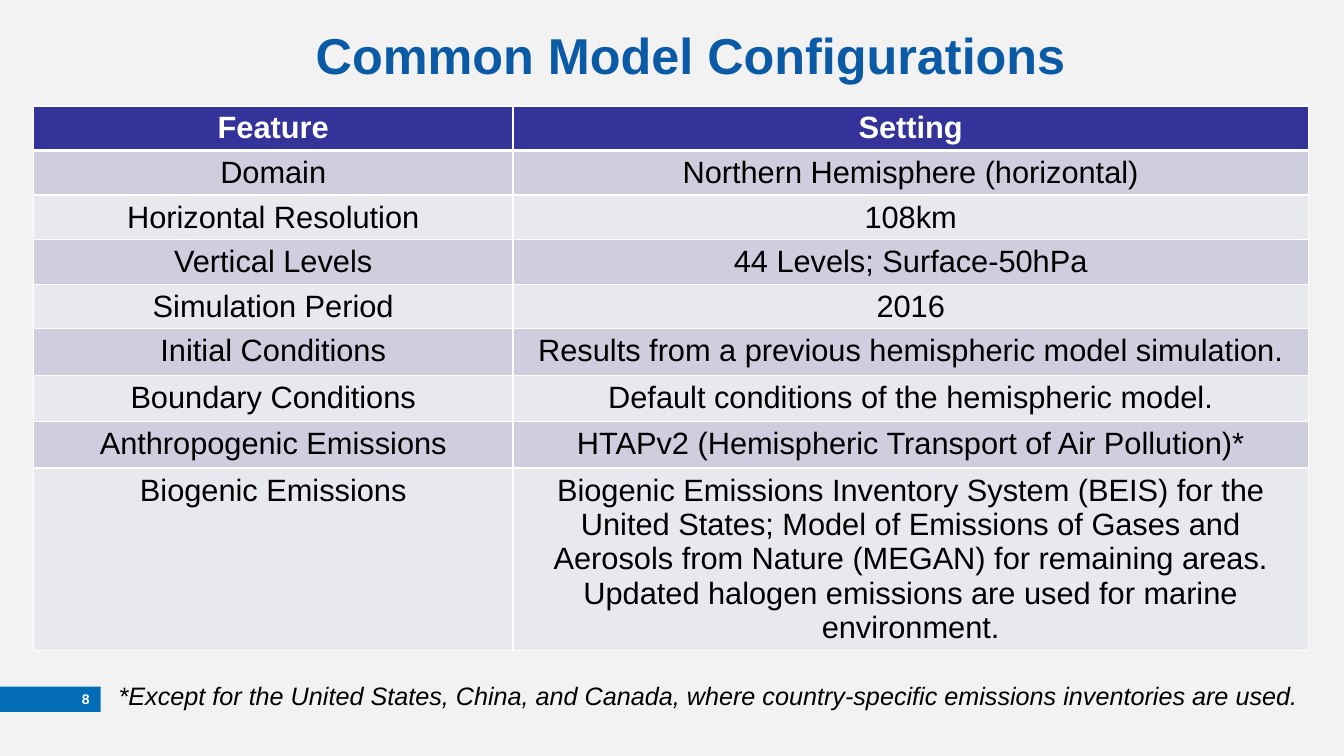
from lxml.etree import SubElement
from pptx import Presentation
from pptx.dml.color import RGBColor
from pptx.enum.shapes import MSO_SHAPE
from pptx.enum.text import MSO_ANCHOR, MSO_AUTO_SIZE, PP_ALIGN
from pptx.oxml.ns import qn
from pptx.util import Cm, Pt

WHITE = RGBColor(0xFF, 0xFF, 0xFF)
BLACK = RGBColor(0x00, 0x00, 0x00)
PALE_GREY = RGBColor(0xF2, 0xF2, 0xF2)
TITLE_BLUE = RGBColor(0x0B, 0x5A, 0xA5)
TAB_BLUE = RGBColor(0x02, 0x6C, 0xB6)
HEADER_INDIGO = RGBColor(0x33, 0x33, 0x99)
BANDS = [RGBColor(0xCE, 0xCE, 0xDE), RGBColor(0xE8, 0xE8, 0xEF)]

TITLE_FORMAT = {"size": Pt(36), "bold": True}
HEADER_FORMAT = {"size": Pt(22), "bold": True}
BODY_FORMAT = {"size": Pt(22), "bold": False}
NUMBER_FORMAT = {"size": Pt(10), "bold": True}
NOTE_FORMAT = {"size": Pt(18), "italic": True}

SETTINGS = [
    ("Feature", "Setting"),
    ("Domain", "Northern Hemisphere (horizontal)"),
    ("Horizontal Resolution", "108km"),
    ("Vertical Levels", "44 Levels; Surface-50hPa"),
    ("Simulation Period", "2016"),
    ("Initial Conditions", "Results from a previous hemispheric model simulation."),
    ("Boundary Conditions", "Default conditions of the hemispheric model."),
    ("Anthropogenic Emissions", "HTAPv2 (Hemispheric Transport of Air Pollution)*"),
    ("Biogenic Emissions",
     "Biogenic Emissions Inventory System (BEIS) for the United States; "
     "Model of Emissions of Gases and Aerosols from Nature (MEGAN) for "
     "remaining areas. Updated halogen emissions are used for marine "
     "environment."),
]
COLUMN_WIDTHS = [12.09, 20.04]
ROW_HEIGHTS = [1.12] * 5 + [1.17] * 3 + [4.6]
FOOTNOTE = ("*Except for the United States, China, and Canada, where "
            "country-specific emissions inventories are used.")


def write(frame, text, color, formats, align):
    para = frame.paragraphs[0]
    para.alignment = align
    span = para.add_run()
    span.text = text
    span.font.name = "Arial"
    span.font.color.rgb = color
    for name, value in formats.items():
        setattr(span.font, name, value)


def add_title(page, text):
    title = page.shapes.title
    title.left, title.top = Cm(7.39), Cm(0.41)
    title.width, title.height = Cm(20.04), Cm(1.9)
    title.text_frame.auto_size = MSO_AUTO_SIZE.NONE
    title.text_frame.vertical_anchor = MSO_ANCHOR.MIDDLE
    write(title.text_frame, text, TITLE_BLUE, TITLE_FORMAT, PP_ALIGN.CENTER)


def set_borders(cell, widths):
    """Draw white cell edges; widths maps L, R, T and B to points."""
    properties = cell._tc.get_or_add_tcPr()
    for side, width in widths.items():
        line = SubElement(properties, qn(f"a:ln{side}"), w=str(Pt(width)))
        fill = SubElement(line, qn("a:solidFill"))
        SubElement(fill, qn("a:srgbClr"), val=str(WHITE))


def add_settings_table(page):
    table = page.shapes.add_table(
        len(SETTINGS), len(COLUMN_WIDTHS), Cm(0.84), Cm(2.67),
        Cm(sum(COLUMN_WIDTHS)), Cm(sum(ROW_HEIGHTS))).table
    for column, width in zip(table.columns, COLUMN_WIDTHS):
        column.width = Cm(width)
    for index, (row, height, texts) in enumerate(
            zip(table.rows, ROW_HEIGHTS, SETTINGS)):
        row.height = Cm(height)
        header = index == 0
        fill = HEADER_INDIGO if header else BANDS[(index - 1) % 2]
        color = WHITE if header else BLACK
        formats = HEADER_FORMAT if header else BODY_FORMAT
        borders = {"L": 1, "R": 1, "T": 3 if index == 1 else 1,
                   "B": 3 if header else 1}
        for cell, text in zip(row.cells, texts):
            set_borders(cell, borders)
            cell.fill.solid()
            cell.fill.fore_color.rgb = fill
            write(cell.text_frame, text, color, formats, PP_ALIGN.CENTER)


def add_page_number(page, number):
    tab = page.shapes.add_shape(
        MSO_SHAPE.RECTANGLE, Cm(0), Cm(17.3), Cm(2.54), Cm(0.64))
    tab.shadow.inherit = False
    tab.fill.solid()
    tab.fill.fore_color.rgb = TAB_BLUE
    tab.line.fill.background()
    frame = tab.text_frame
    margins = {"margin_left": 0, "margin_top": 0, "margin_bottom": 0,
               "margin_right": Cm(0.28)}
    for name, value in margins.items():
        setattr(frame, name, value)
    frame.vertical_anchor = MSO_ANCHOR.MIDDLE
    write(frame, number, WHITE, NUMBER_FORMAT, PP_ALIGN.RIGHT)


def add_footnote(page, text):
    box = page.shapes.add_textbox(Cm(2.74), Cm(17.02), Cm(30.28), Cm(1.02))
    box.text_frame.word_wrap = True
    write(box.text_frame, text, BLACK, NOTE_FORMAT, PP_ALIGN.LEFT)


def main():
    deck = Presentation()
    deck.slide_width, deck.slide_height = Cm(33.87), Cm(19.05)
    page = deck.slides.add_slide(deck.slide_layouts.get_by_name("Title Only"))
    page.background.fill.solid()
    page.background.fill.fore_color.rgb = PALE_GREY
    add_title(page, "Common Model Configurations")
    add_settings_table(page)
    add_page_number(page, "8")
    add_footnote(page, FOOTNOTE)
    deck.save("out.pptx")


if __name__ == "__main__":
    main()
